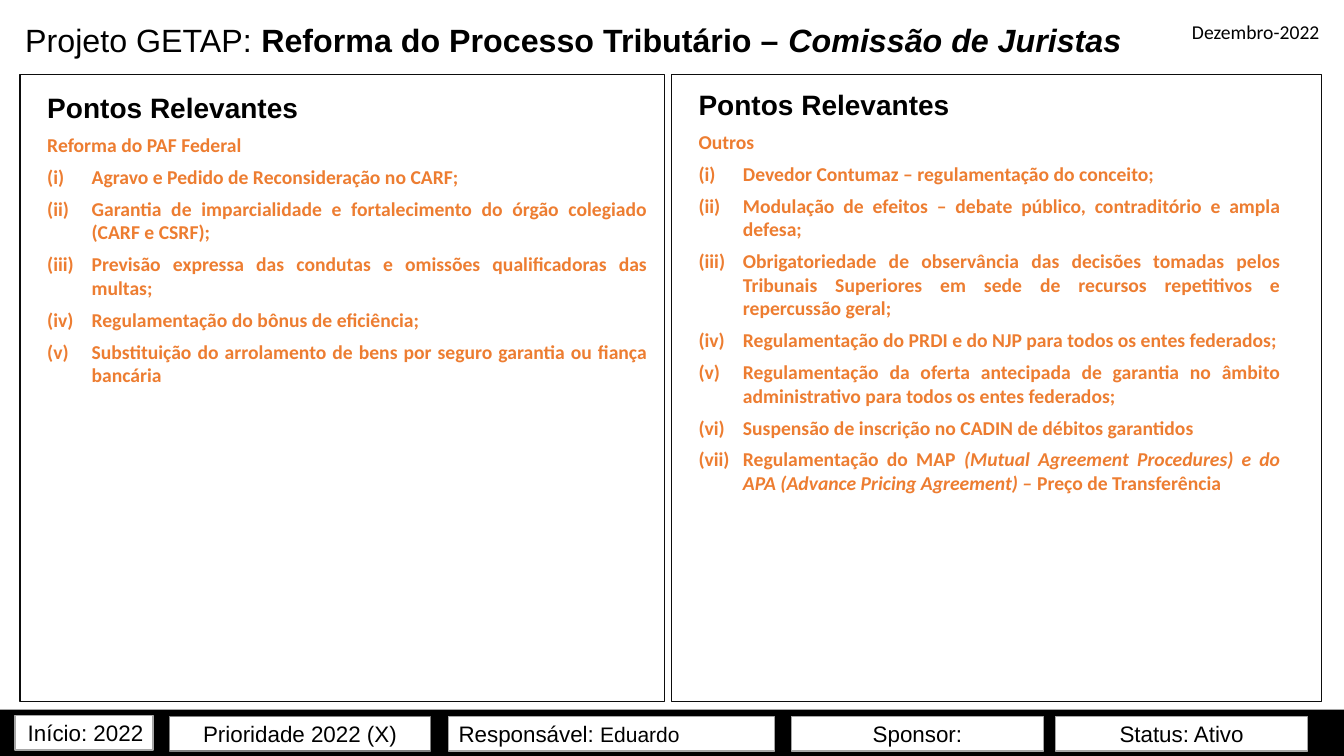
from dataclasses import dataclass

from lxml import etree
from pptx import Presentation
from pptx.dml.color import RGBColor
from pptx.enum.shapes import MSO_SHAPE
from pptx.enum.text import MSO_ANCHOR, MSO_AUTO_SIZE, PP_ALIGN
from pptx.oxml.ns import qn
from pptx.util import Inches, Pt

RECT = MSO_SHAPE.RECTANGLE
TOP, MIDDLE, BOTTOM = MSO_ANCHOR.TOP, MSO_ANCHOR.MIDDLE, MSO_ANCHOR.BOTTOM
LEFT, CENTER, RIGHT, JUSTIFY = PP_ALIGN.LEFT, PP_ALIGN.CENTER, PP_ALIGN.RIGHT, PP_ALIGN.JUSTIFY
NO_RESIZE = MSO_AUTO_SIZE.NONE


@dataclass(frozen=True)
class Theme:
    black: str = "000000"
    white: str = "FFFFFF"
    accent: str = "ED7D31"
    frame: str = "0D0D0D"
    gray: str = "A6A6A6"
    dark_gray: str = "808080"
    head_font: str = "Arial"
    body_font: str = "Calibri"
    title: float = 23
    heading: float = 20
    body: float = 14
    status: float = 16
    owner: float = 15


T = Theme()

TITLE = [
    ("Projeto GETAP: ", {}),
    ("Reforma do Processo Tributário – ", {"bold": True}),
    ("Comissão de Juristas", {"bold": True, "italic": True}),
]
DATE = "Dezembro-2022"
HEADING = "Pontos Relevantes"

PANELS = [
    {
        "frame": (0.2, 0.74, 6.39, 6.22),
        "text": (0.37, 0.85, 6.15, 5.84),
        "topic": "Reforma do PAF Federal",
        "points": [
            "Agravo e Pedido de Reconsideração no CARF;",
            "Garantia de imparcialidade e fortalecimento do órgão colegiado (CARF e CSRF);",
            "Previsão expressa das condutas e omissões qualificadoras das multas;",
            "Regulamentação do bônus de eficiência;",
            "Substituição do arrolamento de bens por seguro garantia ou fiança bancária",
        ],
    },
    {
        "frame": (6.66, 0.74, 6.45, 6.22),
        "text": (6.83, 0.82, 5.97, 5.84),
        "topic": "Outros",
        "points": [
            "Devedor Contumaz – regulamentação do conceito;",
            "Modulação de efeitos – debate público, contraditório e ampla defesa;",
            "Obrigatoriedade de observância das decisões tomadas pelos Tribunais Superiores "
            "em sede de recursos repetitivos e repercussão geral;",
            "Regulamentação do PRDI e do NJP para todos os entes federados;",
            "Regulamentação da oferta antecipada de garantia no âmbito administrativo "
            "para todos os entes federados;",
            "Suspensão de inscrição no CADIN de débitos garantidos",
            [
                ("Regulamentação do MAP ", {}),
                ("(Mutual Agreement Procedures) e do APA (Advance Pricing Agreement) – ", {"italic": True}),
                ("Preço de Transferência", {}),
            ],
        ],
    },
]

STATUS_BAR = (0, 7.04, 13.33, 0.47)
STATUS = [
    ((0.15, 7.1, 1.37, 0.34), "Início: 2022", RIGHT, T.gray),
    ((1.68, 7.11, 2.59, 0.34), "Prioridade 2022 (X)", CENTER, T.dark_gray),
    ((4.45, 7.11, 3.23, 0.34), [("Responsável: ", {}), ("Eduardo", {"size": Pt(T.owner)})], LEFT, T.gray),
    ((7.85, 7.11, 2.5, 0.34), "Sponsor:", CENTER, T.gray),
    ((10.47, 7.11, 2.5, 0.34), "Status: Ativo", CENTER, T.gray),
]


def add_box(slide, at, fill=None, line=None):
    sp = slide.shapes.add_shape(RECT, *map(Inches, at))
    sp.shadow.inherit = False
    if fill:
        sp.fill.solid()
        sp.fill.fore_color.rgb = RGBColor.from_string(fill)
    else:
        sp.fill.background()
    if line:
        sp.line.color.rgb = RGBColor.from_string(line)
        sp.line.width = Pt(1)
    else:
        sp.line.fill.background()
    return sp


def frame_text(sp, anchor, wrap=True):
    tf = sp.text_frame
    tf.auto_size = NO_RESIZE
    tf.word_wrap = wrap
    tf.vertical_anchor = anchor
    tf.margin_left = tf.margin_right = Inches(0.1)
    tf.margin_top = tf.margin_bottom = Inches(0.05)
    return tf


def write(p, content, font, size, color=T.black, align=LEFT, bold=False):
    p.alignment = align
    p.font.name = font
    p.font.size = Pt(size)
    p.font.bold = bold
    p.font.color.rgb = RGBColor.from_string(color)
    runs = [(content, {})] if isinstance(content, str) else content
    for text, style in runs:
        r = p.add_run()
        r.text = text
        for name, value in style.items():
            setattr(r.font, name, value)


def number(p):
    pPr = p._p.get_or_add_pPr()
    pPr.set("marL", str(Inches(0.44)))
    pPr.set("indent", str(-Inches(0.44)))
    bullet = etree.Element(qn("a:buAutoNum"), type="romanLcParenBoth")
    pPr.find(qn("a:defRPr")).addprevious(bullet)


def add_panel(slide, panel):
    add_box(slide, panel["frame"], line=T.frame)
    tf = frame_text(add_box(slide, panel["text"], fill=T.white), TOP)
    p = tf.paragraphs[0]
    p.space_before = Pt(6)
    write(p, HEADING, T.head_font, T.heading, align=JUSTIFY, bold=True)
    for i, content in enumerate([panel["topic"], *panel["points"]]):
        p = tf.add_paragraph()
        p.space_before = Pt(6)
        write(p, content, T.body_font, T.body, T.accent, JUSTIFY, True)
        if i > 0:
            number(p)


def main():
    prs = Presentation()
    prs.slide_width, prs.slide_height = Inches(13.33), Inches(7.5)
    slide = prs.slides.add_slide(prs.slide_layouts[5])

    title = slide.shapes.title
    title.left, title.top, title.width, title.height = map(Inches, (0.15, 0.05, 11.35, 0.59))
    p = frame_text(title, BOTTOM).paragraphs[0]
    p.line_spacing = 0.9
    write(p, TITLE, T.head_font, T.title)

    add_box(slide, STATUS_BAR, fill=T.black)
    for panel in PANELS:
        add_panel(slide, panel)
    for at, content, align, line in STATUS:
        tf = frame_text(add_box(slide, at, T.white, line), MIDDLE)
        write(tf.paragraphs[0], content, T.head_font, T.status, align=align)

    date = slide.shapes.add_textbox(*map(Inches, (11.72, 0.11, 1.47, 0.41)))
    tf = frame_text(date, MIDDLE, wrap=False)
    write(tf.paragraphs[0], DATE, T.body_font, T.body, align=CENTER)

    prs.save("out.pptx")


if __name__ == "__main__":
    main()
